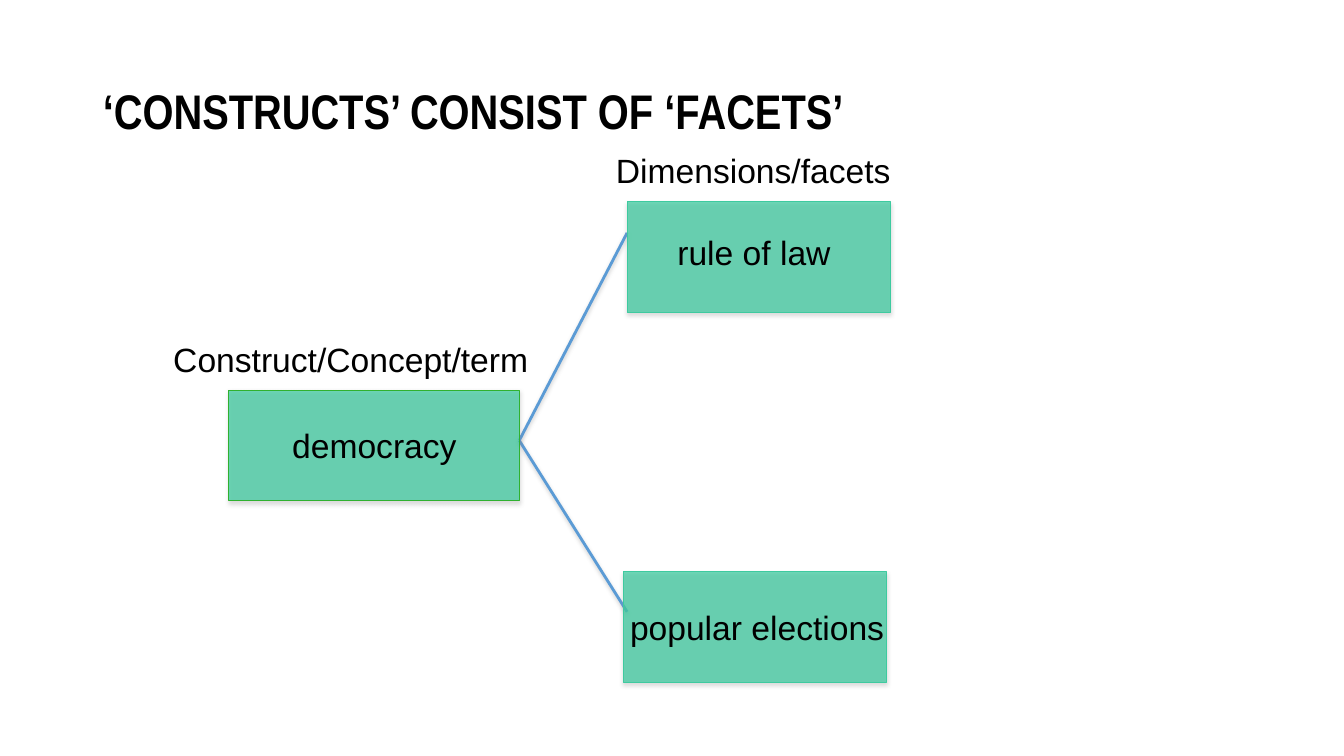
from lxml.etree import SubElement
from pptx import Presentation
from pptx.dml.color import RGBColor
from pptx.enum.shapes import MSO_CONNECTOR as Connector, MSO_SHAPE as Shape
from pptx.enum.text import MSO_ANCHOR as Anchor, MSO_AUTO_SIZE as AutoSize, PP_ALIGN as Align
from pptx.oxml.ns import qn
from pptx.util import Inches, Pt

# Content
TITLE = "‘CONSTRUCTS’ CONSIST OF ‘FACETS’"
BOX_HEIGHT, LABEL_HEIGHT = 1.1, 0.5
FACET_WIDTH = 2.61
# left, top, width, outline
BOXES = [
    (2.27, 3.87, 2.88, "construct_line"),
    (6.18, 5.67, FACET_WIDTH, "box"),
    (6.22, 2.0, FACET_WIDTH, "box"),
]
# text, left, top, width, wrap
LABELS = [
    ("rule of law", 6.62, 2.25, 1.74, False),
    ("popular elections", 6.15, 5.97, 2.75, False),
    ("Construct/Concept/term", 1.62, 3.31, 3.76, False),
    ("Dimensions/facets", 6.01, 1.44, 2.95, False),
    ("democracy", 2.8, 4.17, 2.86, True),
]
CONSTRUCT_END = (5.15, 4.37)
FACET_ENDS = [(6.22, 6.07), (6.22, 2.31)]

THEME = {
    "text": "000000", "box": "3ECA9F", "construct_line": "30B12F",
    "link": "5B9BD5", "shadow": "808080",
    "title_font": "Arial Narrow", "body_font": "Arial",
    "title_size": 34.7, "body_size": 24,
}


def color(name):
    return RGBColor.from_string(THEME[name])


def write(frame, text, *, font, size, bold=False, wrap=True, spacing=None,
          anchor=Anchor.TOP, fit=AutoSize.NONE):
    frame.word_wrap = wrap
    frame.auto_size = fit
    frame.vertical_anchor = anchor
    paragraph = frame.paragraphs[0]
    paragraph.alignment = Align.LEFT
    if spacing:
        paragraph.line_spacing = spacing
    run = paragraph.add_run()
    run.text = text
    run.font.name = THEME[font]
    run.font.size = Pt(THEME[size])
    run.font.bold = bold
    run.font.color.rgb = color("text")


def add_alpha(color_element, percent):
    SubElement(color_element, qn("a:alpha"), val=str(percent * 1000))


def cast_shadow(part, opacity, distance):
    """Soft downward shadow; call after fill and line are set."""
    effects = SubElement(part._element.spPr, qn("a:effectLst"))
    shadow = SubElement(effects, qn("a:outerShdw"), blurRad=str(Pt(3.1)),
                        dist=str(Pt(distance)), dir="5400000", rotWithShape="0")
    add_alpha(SubElement(shadow, qn("a:srgbClr"), val=THEME["shadow"]), opacity)


def add_link(slide, start, end):
    link = slide.shapes.add_connector(Connector.STRAIGHT, *map(Inches, start + end))
    link.line.color.rgb = color("link")
    link.line.width = Pt(2)
    cast_shadow(link, 38, 1.6)


def add_box(slide, left, top, width, outline):
    box = slide.shapes.add_shape(Shape.RECTANGLE, *map(Inches, (left, top, width, BOX_HEIGHT)))
    box.fill.solid()
    box.fill.fore_color.rgb = color("box")
    add_alpha(box._element.spPr.find(qn("a:solidFill"))[0], 74)
    box.line.color.rgb = color(outline)
    box.line.width = Pt(0.75)
    cast_shadow(box, 35, 1.8)


def main():
    deck = Presentation()
    deck.slide_width, deck.slide_height = Inches(13.33), Inches(7.5)
    slide = deck.slides.add_slide(deck.slide_layouts[5])

    # Title
    title = slide.shapes.title
    title.left, title.top, title.width, title.height = map(Inches, (0.92, 0.4, 11.5, 1.45))
    write(title.text_frame, TITLE, font="title_font", size="title_size",
          bold=True, spacing=0.9, anchor=Anchor.MIDDLE)

    # Links from the facets to the construct, behind the boxes
    for facet_end in FACET_ENDS:
        add_link(slide, facet_end, CONSTRUCT_END)

    # Boxes
    for box in BOXES:
        add_box(slide, *box)

    # Labels
    for text, left, top, width, wrap in LABELS:
        label = slide.shapes.add_textbox(*map(Inches, (left, top, width, LABEL_HEIGHT)))
        write(label.text_frame, text, font="body_font", size="body_size",
              wrap=wrap, fit=AutoSize.SHAPE_TO_FIT_TEXT)

    deck.save("out.pptx")


if __name__ == "__main__":
    main()
